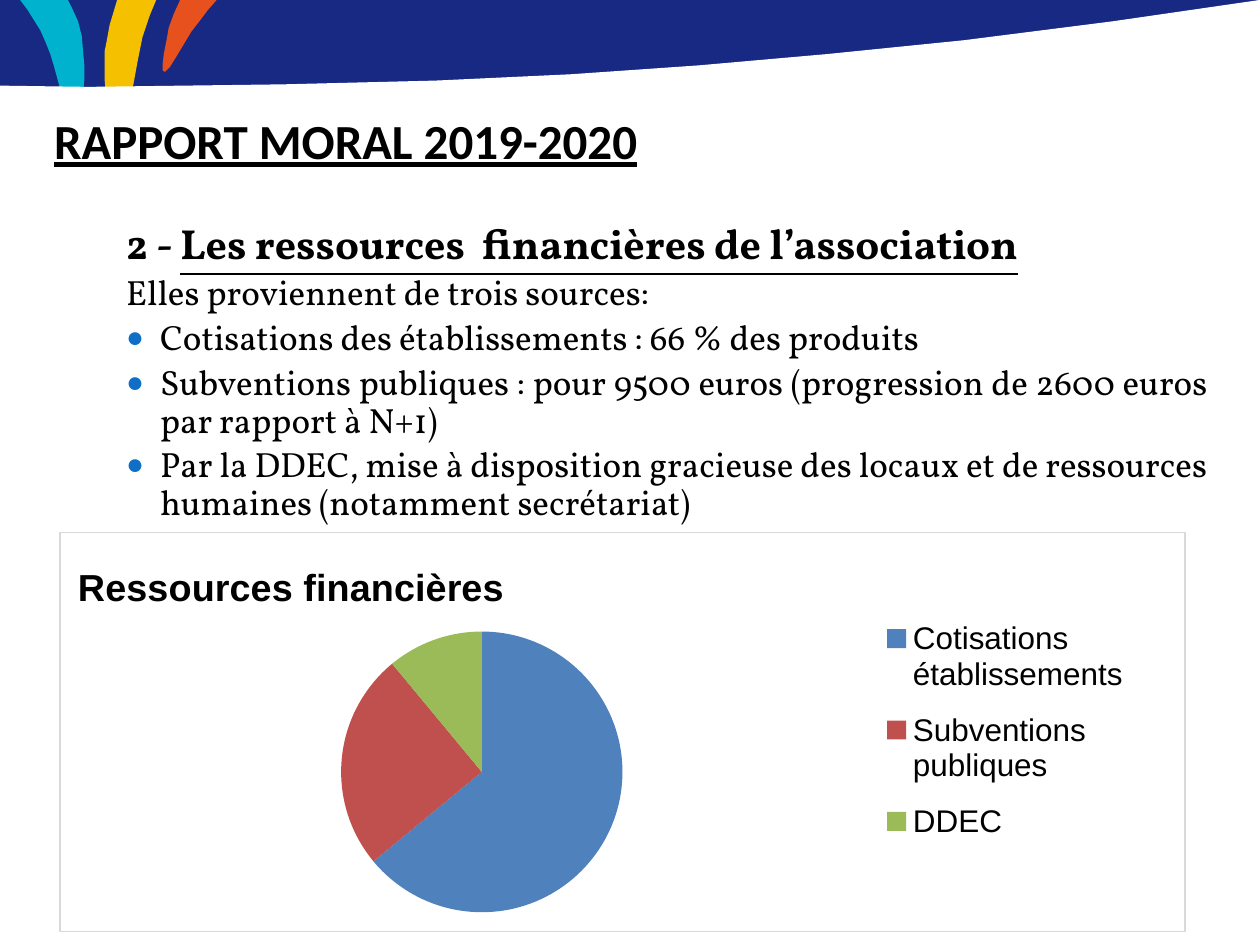
from lxml import etree
from pptx import Presentation
from pptx import util as u
from pptx.chart.data import CategoryChartData
from pptx.dml.color import RGBColor
from pptx.enum import chart as charts, text
from pptx.oxml import parse_xml
from pptx.oxml.ns import nsdecls, qn

Inches, Pt = u.Inches, u.Pt

COLORS = {
    "navy": "172983", "teal": "00B2CE", "yellow": "F4C000", "orange": "E7511E",
    "page": "FFFFFF", "ink": "000000", "bullet": "0F6FC6", "border": "D9D9D9",
    "Cotisations établissements": "4F81BD",
    "Subventions publiques": "C0504D",
    "DDEC": "9BBB59",
}
SHARES = {"Cotisations établissements": 64, "Subventions publiques": 25, "DDEC": 11}
SOURCES = [
    "Cotisations des établissements : 66 % des produits",
    "Subventions publiques : pour 9500 euros (progression de 2600 euros par rapport à N+1)",
    "Par la DDEC, mise à disposition gracieuse des locaux et de ressources humaines "
    "(notamment secrétariat)",
]

# Banner outlines from back to front, in inches from the banner's corner
BANNER = [
    ("navy", [(10, 0), (0, 0), (0, 1.35), (0.7, 1.35), (2.25, 1.33), (3.46, 1.3),
              (4.53, 1.25), (5.54, 1.18), (6.56, 1.1), (7.65, 0.98), (8.83, 0.83),
              (10, 0.66)]),
    ("teal", [(0.54, 0), (0.16, 0), (0.22, 0.08), (0.27, 0.16), (0.32, 0.24),
              (0.36, 0.33), (0.4, 0.43), (0.43, 0.53), (0.46, 0.64), (0.49, 0.75),
              (0.51, 0.87), (0.53, 0.99), (0.56, 1.08), (0.58, 1.06), (0.62, 0.94),
              (0.64, 0.84), (0.66, 0.74), (0.67, 0.63), (0.67, 0.52), (0.66, 0.41),
              (0.65, 0.29), (0.62, 0.17), (0.57, 0.06)]),
    ("yellow", [(1.24, 0), (0.93, 0), (0.9, 0.1), (0.87, 0.2), (0.85, 0.31),
                (0.83, 0.41), (0.83, 0.63), (0.84, 0.74), (0.85, 0.85), (0.87, 0.95),
                (0.9, 1.06), (0.93, 1.17), (0.98, 1.27), (1.01, 1.3), (1.03, 1.3),
                (1.03, 0.97), (1.04, 0.84), (1.05, 0.72), (1.07, 0.61), (1.09, 0.5),
                (1.11, 0.4), (1.13, 0.3), (1.16, 0.21), (1.19, 0.12)]),
    ("orange", [(1.72, 0), (1.43, 0), (1.38, 0.11), (1.34, 0.22), (1.32, 0.33),
                (1.3, 0.43), (1.29, 0.52), (1.29, 0.56), (1.31, 0.57), (1.35, 0.53),
                (1.4, 0.45), (1.46, 0.35), (1.52, 0.25), (1.59, 0.16), (1.65, 0.08)]),
    ("page", [(10, 0), (8.83, 0.17), (7.65, 0.32), (6.56, 0.43), (5.54, 0.52),
              (4.53, 0.59), (3.46, 0.64), (2.25, 0.67), (0.7, 0.69), (0, 0.68),
              (0, 7.5), (10, 7.5)]),
]


def rgb(name):
    return RGBColor.from_string(COLORS[name])


def style_font(font, name, size, bold=False, underline=False):
    font.name, font.size = name, Pt(size)
    font.bold, font.underline = bold, underline
    font.color.rgb = rgb("ink")


def place(shape, box):
    shape.left, shape.top, shape.width, shape.height = map(Inches, box)
    frame = shape.text_frame
    frame.word_wrap = True
    frame.auto_size = text.MSO_AUTO_SIZE.NONE
    frame.vertical_anchor = text.MSO_ANCHOR.TOP
    return frame


def set_bullet(paragraph, char=None):
    props = paragraph._p.get_or_add_pPr()
    if char is None:
        etree.SubElement(props, qn("a:buNone"))
        return
    color = etree.SubElement(props, qn("a:buClr"))
    etree.SubElement(color, qn("a:srgbClr"), val=COLORS["bullet"])
    etree.SubElement(props, qn("a:buSzPct"), val="85000")
    etree.SubElement(props, qn("a:buFont"), typeface="Arial")
    etree.SubElement(props, qn("a:buChar"), char=char)


def add_banner(slide, left, top):
    """Draws the banner and moves it to the layout, behind the content."""
    layout_tree = slide.slide_layout.shapes._spTree
    for depth, (color, outline) in enumerate(BANNER):
        points = [(Inches(left + x), Inches(top + y)) for x, y in outline]
        builder = slide.shapes.build_freeform(*points[0])
        builder.add_line_segments(points[1:], close=True)
        band = builder.convert_to_shape()
        band.fill.solid()
        band.fill.fore_color.rgb = rgb(color)
        band.line.fill.background()
        band.shadow.inherit = False
        layout_tree.insert(2 + depth, band._element)


def add_heading(slide, box):
    heading = place(slide.shapes.title, box).paragraphs[0]
    heading.text = "RAPPORT MORAL 2019-2020"
    heading.alignment = text.PP_ALIGN.LEFT
    style_font(heading.runs[0].font, "Calibri", 28, bold=True, underline=True)


def add_resources(slide, box):
    frame = place(slide.placeholders[1], box)

    def add_line(parts, size, margin, indent, before, bullet=None, bold=False):
        first = not frame.paragraphs[0].runs
        line = frame.paragraphs[0] if first else frame.add_paragraph()
        for wording, underline in parts:
            run = line.add_run()
            run.text = wording
            style_font(run.font, "Vollkorn", size, bold, underline)
        line.level = 1 if bullet else 0
        line.alignment = text.PP_ALIGN.JUSTIFY if not bold else text.PP_ALIGN.LEFT
        line.line_spacing = 0.9
        line.space_before = Pt(before)
        props = line._p.get_or_add_pPr()
        props.set("marL", str(Inches(margin)))
        props.set("indent", str(Inches(indent)))
        set_bullet(line, bullet)

    add_line([("2 - ", False), ("Les ressources  financières de l’association", True)],
             24, 0.7, -0.27, 4.8, bold=True)
    add_line([("Elles proviennent de trois sources:", False)], 20, 0.43, 0, 4)
    for source in SOURCES:
        add_line([(source, False)], 20, 0.7, -0.27, 4, bullet="●")


def manual_layout(x, y, w=None, h=None, inner=False):
    target = '<c:layoutTarget val="inner"/>' if inner else ""
    sizes = {"x": x, "y": y, "w": w, "h": h}
    modes = '<c:xMode val="edge"/><c:yMode val="edge"/>'
    values = "".join(f'<c:{k} val="{v}"/>' for k, v in sizes.items() if v is not None)
    return parse_xml(f'<c:layout {nsdecls("c")}><c:manualLayout>{target}{modes}{values}'
                     '</c:manualLayout></c:layout>')


def add_shares_pie(slide, box):
    data = CategoryChartData()
    data.categories = list(SHARES)
    data.add_series("Ressources financières", list(SHARES.values()))
    pie = slide.shapes.add_chart(charts.XL_CHART_TYPE.PIE, *map(Inches, box), data).chart
    style_font(pie.font, "Arial", 10)

    # Title and legend
    pie.has_title = True
    caption = pie.chart_title.text_frame.paragraphs[0]
    caption.text = "Ressources financières"
    style_font(caption.runs[0].font, "Arial", 21.6, bold=True)
    pie.has_legend = True
    pie.legend.position = charts.XL_LEGEND_POSITION.RIGHT
    pie.legend.include_in_layout = False
    style_font(pie.legend.font, "Arial", 18)

    # Slices
    plot = pie.plots[0]
    plot.vary_by_categories = True
    for index, category in enumerate(SHARES):
        fill = plot.series[0].points[index].format.fill
        fill.solid()
        fill.fore_color.rgb = rgb(category)

    # Positions inside the frame
    space = pie._chartSpace
    for old in space.xpath(".//c:layout"):
        old.getparent().remove(old)
    space.xpath(".//c:title/c:tx")[0].addnext(manual_layout(0.01, 0.06))
    space.xpath(".//c:plotArea")[0].insert(0, manual_layout(0.25, 0.24, 0.25, 0.72, True))
    space.xpath(".//c:legendPos")[0].addnext(manual_layout(0.7, 0.17, 0.28, 0.65))

    # Frame fill and border
    space.xpath("c:chart")[0].addnext(parse_xml(
        f'<c:spPr {nsdecls("c", "a")}>'
        f'<a:solidFill><a:srgbClr val="{COLORS["page"]}"/></a:solidFill>'
        f'<a:ln w="{Pt(0.75)}"><a:solidFill><a:srgbClr val="{COLORS["border"]}"/>'
        '</a:solidFill></a:ln></c:spPr>'))


def main():
    deck = Presentation()
    deck.slide_width, deck.slide_height = Inches(10), Inches(7.5)
    slide = deck.slides.add_slide(deck.slide_layouts[1])
    add_banner(slide, 0, 0)
    add_heading(slide, (0.33, 0.83, 7.41, 1.5))
    add_resources(slide, (0.47, 1.72, 9.22, 4.8))
    add_shares_pie(slide, (0.47, 4.22, 8.94, 3.18))
    deck.save("out.pptx")


if __name__ == "__main__":
    main()
